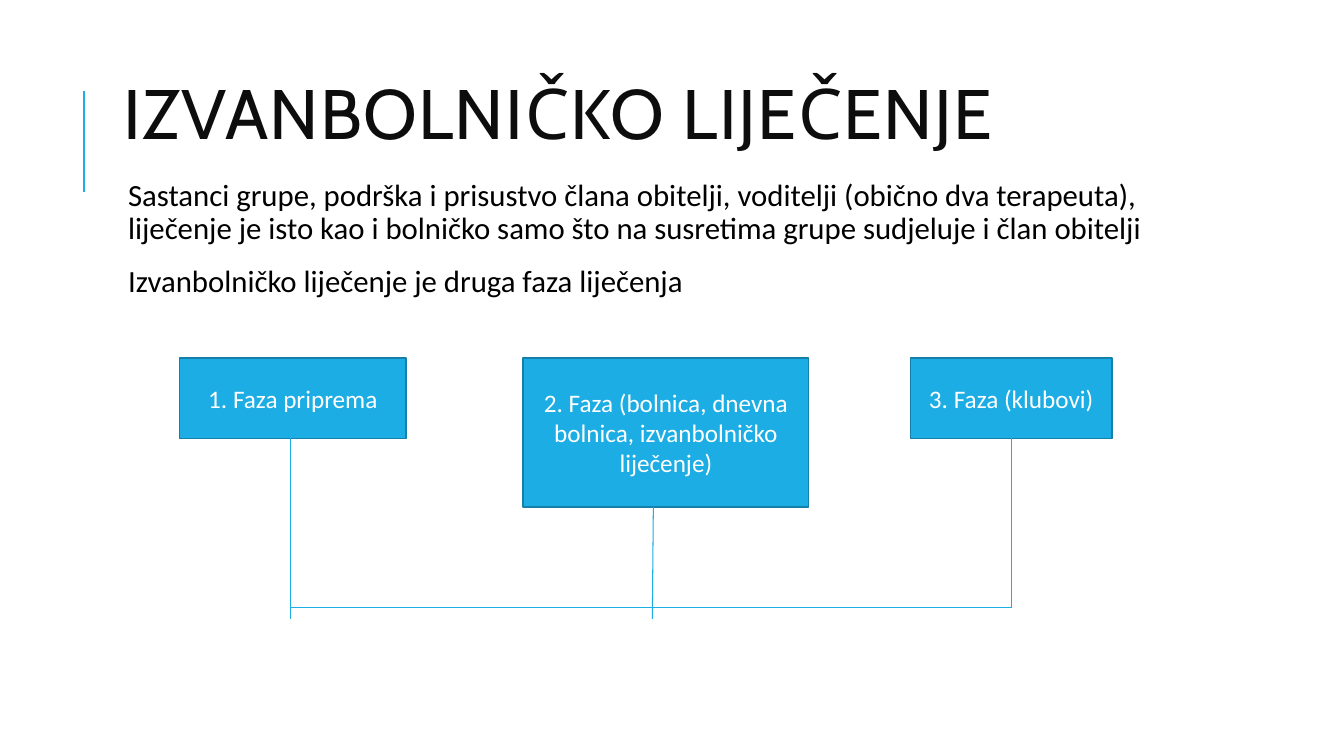
from dataclasses import dataclass

from pptx import Presentation
from pptx.dml.color import RGBColor
from pptx.enum import shapes, text
from pptx.oxml.ns import qn
from pptx.util import Inches, Pt
from lxml import etree


@dataclass(frozen=True)
class Theme:
    accent: str = "1CADE4"
    outline: str = "1580A9"
    title_color: str = "0D0D0D"
    body_color: str = "000000"
    box_color: str = "FFFFFF"
    title_font: str = "Cabin"
    body_font: str = "Calibri"
    title_size: int = 50
    body_size: int = 22
    box_size: int = 18


THEME = Theme()
TITLE = "IZVANBOLNIČKO LIJEČENJE"
BODY = [
    "Sastanci grupe, podrška i prisustvo člana obitelji, voditelji (obično dva terapeuta), "
    "liječenje je isto kao i bolničko samo što na susretima grupe sudjeluje i član obitelji",
    "Izvanbolničko liječenje je druga faza liječenja",
]
PHASE_TOP = 3.55
PHASES = [
    ("1. Faza priprema", 1.78, 2.25, 0.8),
    ("2. Faza (bolnica, dnevna bolnica, izvanbolničko liječenje)", 5.19, 2.83, 1.48),
    ("3. Faza (klubovi)", 9.03, 2, 0.8),
]
FIRST_X, LAST_X, RAIL_Y, STEM_END = 2.88, 10.03, 6.03, 6.14
STEMS = [
    (FIRST_X, 4.35, FIRST_X, STEM_END),
    (LAST_X, 4.35, LAST_X, RAIL_Y),
    (6.48, 5.03, 6.47, STEM_END),
    (FIRST_X, RAIL_Y, LAST_X, RAIL_Y),
]


def place(shape, left, top, width, height):
    shape.left, shape.top = Inches(left), Inches(top)
    shape.width, shape.height = Inches(width), Inches(height)


def format_runs(paragraph, font, size, color):
    for run in paragraph.runs:
        run.font.name = font
        run.font.size = Pt(size)
        run.font.color.rgb = RGBColor.from_string(color)


def add_blank_bullet(paragraph):
    properties = paragraph._p.get_or_add_pPr()
    properties.set("marL", str(Inches(0.1)))
    properties.set("indent", str(Inches(-0.1)))
    bullet_color = etree.SubElement(properties, qn("a:buClr"))
    etree.SubElement(bullet_color, qn("a:srgbClr"), val=THEME.accent)
    etree.SubElement(properties, qn("a:buChar"), char=" ")


def fill_title(slide):
    title = slide.shapes.title
    place(title, 1.12, 0.64, 10.63, 1.09)
    frame = title.text_frame
    frame.text = TITLE
    frame.auto_size = text.MSO_AUTO_SIZE.NONE
    frame.vertical_anchor = text.MSO_ANCHOR.MIDDLE
    paragraph = frame.paragraphs[0]
    paragraph.alignment = text.PP_ALIGN.LEFT
    paragraph.line_spacing = 0.8
    format_runs(paragraph, THEME.title_font, THEME.title_size, THEME.title_color)
    paragraph.runs[0].font._element.set("spc", "100")


def fill_body(slide):
    body = slide.placeholders[1]
    place(body, 1.12, 1.73, 10.63, 5.44)
    frame = body.text_frame
    frame.text = "\n".join(BODY)
    frame.auto_size = text.MSO_AUTO_SIZE.NONE
    frame.margin_left = frame.margin_right = Inches(0.05)
    frame.margin_top = frame.margin_bottom = Inches(0.05)
    for paragraph in frame.paragraphs:
        paragraph.line_spacing = 0.9
        paragraph.space_before = Pt(12)
        paragraph.space_after = Pt(2)
        add_blank_bullet(paragraph)
        format_runs(paragraph, THEME.body_font, THEME.body_size, THEME.body_color)


def add_phase(slide, label, left, width, height):
    box = slide.shapes.add_shape(
        shapes.MSO_SHAPE.RECTANGLE,
        Inches(left), Inches(PHASE_TOP), Inches(width), Inches(height),
    )
    box.shadow.inherit = False
    box.fill.solid()
    box.fill.fore_color.rgb = RGBColor.from_string(THEME.accent)
    box.line.color.rgb = RGBColor.from_string(THEME.outline)
    box.line.width = Pt(1.25)
    frame = box.text_frame
    frame.text = label
    frame.word_wrap = True
    frame.vertical_anchor = text.MSO_ANCHOR.MIDDLE
    paragraph = frame.paragraphs[0]
    paragraph.alignment = text.PP_ALIGN.CENTER
    format_runs(paragraph, THEME.body_font, THEME.box_size, THEME.box_color)


def add_line(slide, start_x, start_y, end_x, end_y, width=0.75):
    line = slide.shapes.add_connector(
        shapes.MSO_CONNECTOR.STRAIGHT,
        Inches(start_x), Inches(start_y), Inches(end_x), Inches(end_y),
    )
    line.line.color.rgb = RGBColor.from_string(THEME.accent)
    line.line.width = Pt(width)
    etree.SubElement(line._element.spPr, qn("a:effectLst"))


def main():
    presentation = Presentation()
    presentation.slide_width = Inches(13.33)
    presentation.slide_height = Inches(7.5)
    slide = presentation.slides.add_slide(presentation.slide_layouts[1])
    fill_title(slide)
    fill_body(slide)
    add_line(slide, 0.83, 1.9, 0.83, 0.9, width=1.5)
    for phase in PHASES:
        add_phase(slide, *phase)
    for stem in STEMS:
        add_line(slide, *stem)
    presentation.save("out.pptx")


if __name__ == "__main__":
    main()
